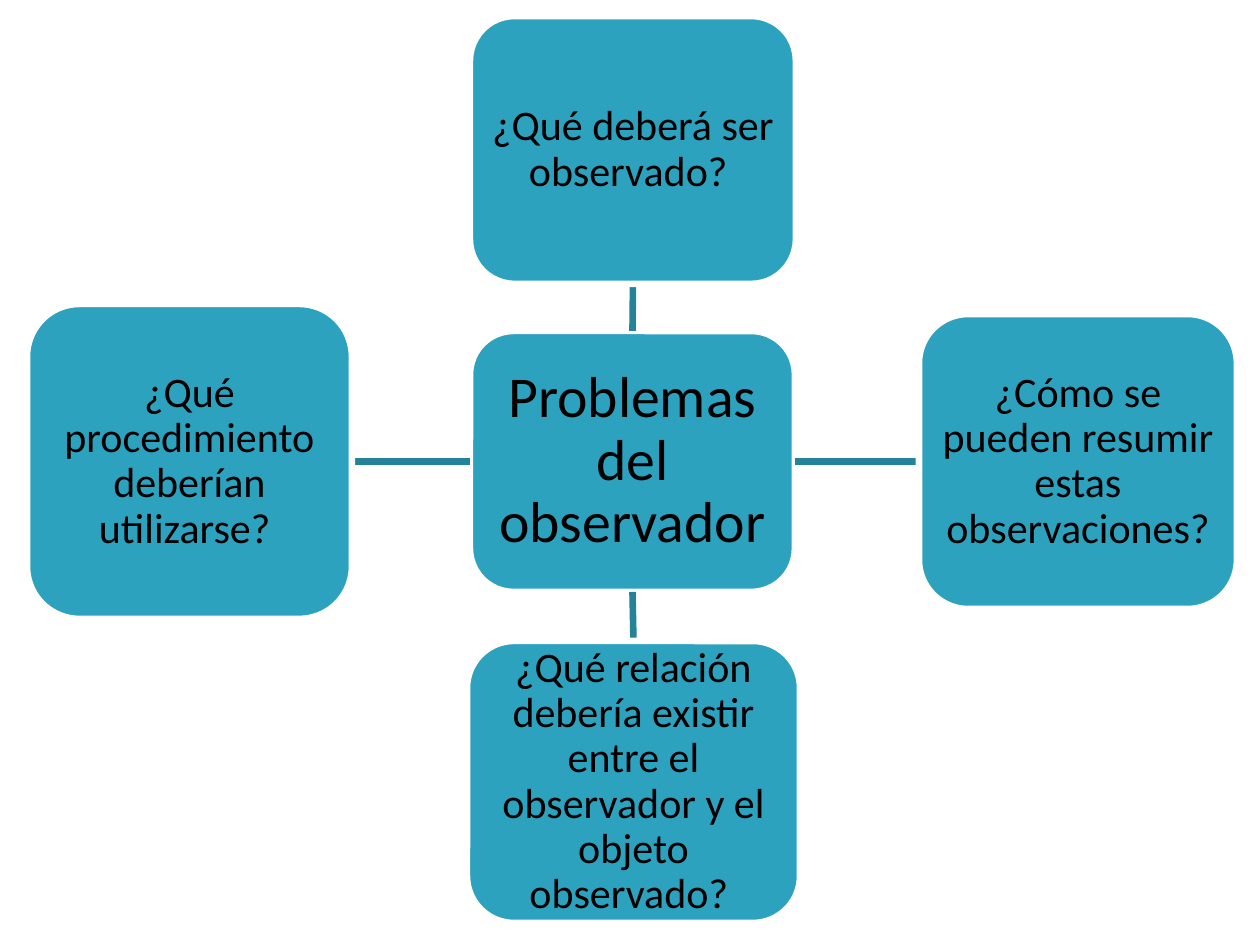
from lxml.etree import SubElement
from pptx import Presentation
from pptx.dml.color import RGBColor
from pptx.enum.shapes import MSO_CONNECTOR as Connector, MSO_SHAPE as Shape
from pptx.enum.text import MSO_ANCHOR as Anchor, PP_ALIGN as Align
from pptx.oxml.ns import qn
from pptx.util import Emu, Pt

PX = 914400 // 126
COLORS = {"box": "2DA2BF", "border": "FFFFFF", "link": "248299", "text": "000000"}
FONT = "Calibri"
LINE_WIDTH = Pt(3.78)
TOP, LEFT, BOTTOM, RIGHT = range(4)

CENTER = ("Problemas del observador ", (470, 331, 325, 261))
# Side of the center box, question, (left, top, width, height)
QUESTIONS = [
    (TOP, "¿Qué deberá ser observado? ", (470, 16, 326, 268)),
    (RIGHT, "¿Cómo se pueden resumir estas observaciones? ", (919, 314, 318, 295)),
    (BOTTOM, "¿Qué relación debería existir entre el observador y el objeto observado? ",
     (467, 641, 333, 282)),
    (LEFT, "¿Qué procedimiento deberían utilizarse? ", (27, 304, 325, 315)),
]


def px(value):
    return Emu(value * PX)


def color(name):
    return RGBColor.from_string(COLORS[name])


def add_box(slide, text, bounds, size, inset):
    shape = slide.shapes.add_shape(Shape.ROUNDED_RECTANGLE, *map(px, bounds))
    shape.shadow.inherit = False
    shape.fill.solid()
    shape.fill.fore_color.rgb = color("box")
    shape.line.color.rgb = color("border")
    shape.line.width = LINE_WIDTH
    frame = shape.text_frame
    frame.text = text
    frame.word_wrap = True
    frame.vertical_anchor = Anchor.MIDDLE
    frame.margin_left = frame.margin_right = px(inset)
    frame.margin_top = frame.margin_bottom = px(inset)
    paragraph = frame.paragraphs[0]
    paragraph.alignment = Align.CENTER
    paragraph.line_spacing = 0.9
    font = paragraph.runs[0].font
    font.name = FONT
    font.size = Pt(size)
    font.color.rgb = color("text")
    return shape


def add_link(slide):
    """Add a connector whose ends are joined to boxes afterwards."""
    link = slide.shapes.add_connector(Connector.STRAIGHT, 0, 0, 0, 0)
    link.line.color.rgb = color("link")
    link.line.width = LINE_WIDTH
    SubElement(link.line._get_or_add_ln().getparent(), qn("a:effectLst"))
    return link


def add_question(slide, center, side, text, bounds):
    """Add a question box over its link to one side of the center box."""
    link = add_link(slide)
    box = add_box(slide, text, bounds, size=24, inset=9)
    link.begin_connect(center, side)
    link.end_connect(box, (side + 2) % 4)


def main():
    presentation = Presentation()
    presentation.slide_width = px(1260)
    presentation.slide_height = px(945)
    slide = presentation.slides.add_slide(presentation.slide_layouts[6])
    center = add_box(slide, *CENTER, size=33, inset=11)
    for side, text, bounds in QUESTIONS:
        add_question(slide, center, side, text, bounds)
    presentation.save("out.pptx")


if __name__ == "__main__":
    main()
